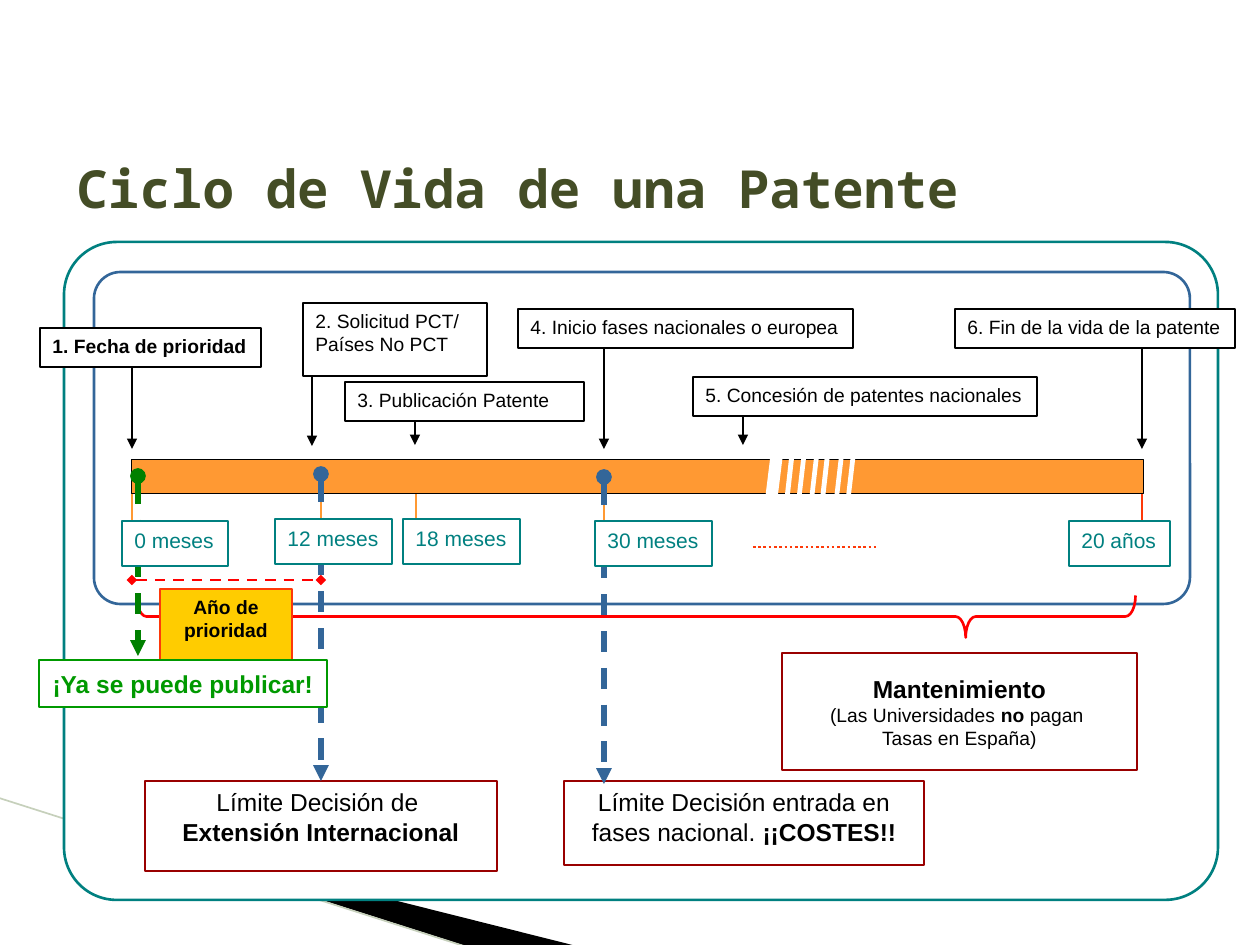
from lxml.etree import SubElement
from pptx import Presentation
from pptx.dml.color import RGBColor
from pptx.enum.dml import MSO_LINE
from pptx.enum.shapes import MSO_CONNECTOR, MSO_SHAPE
from pptx.enum.text import MSO_ANCHOR, PP_ALIGN
from pptx.oxml.ns import qn
from pptx.util import Pt

PX = 914400 / 126
C = {"white": "FFFFFF", "black": "000000", "olive": "444D26", "sage": "C6D0BB",
     "teal": "008080", "blue": "336699", "red": "FF0000", "orange": "FF9933",
     "scarlet": "FD3909", "gold": "FFCC00", "maroon": "990000",
     "green": "009900", "forest": "008000"}

EVENTS = [
    ([["1. Fecha de prioridad"]], (40, 328, 221, 39), True, False),
    ([["2. Solicitud PCT/"], ["Países No PCT"]], (303, 303, 184, 73), False, True),
    ([["3. Publicación Patente"]], (345, 382, 239, 39), False, True),
    ([["4. Inicio fases nacionales o europea"]], (518, 309, 335, 39), False, False),
    ([["5. Concesión de patentes nacionales"]], (693, 377, 344, 39), False, False),
    ([["6. Fin de la vida de la patente"]], (955, 309, 280, 39), False, False),
]
ELBOWS = [(252, 362, 132, 449), (475, 365, 312, 446), (577, 416, 415, 445),
          (717, 345, 604, 449), (906, 416, 743, 445), (979, 344, 1142, 449)]
TICKS = [(132, "orange"), (321, "orange"), (416, "orange"), (604, "orange"),
         (1142, "scarlet")]
MONTHS = [("0 meses", 122, 521, 106), ("12 meses", 275, 519, 117),
          ("18 meses", 403, 519, 117), ("30 meses", 595, 521, 117),
          ("20 años", 1069, 521, 101)]
CUTS = [(765, 446, 19, 0.35), (784, 450, 11, 0.55), (796, 450, 11, 0.57),
        (808, 456, 11, 0.57), (820, 446, 11, 0.55), (834, 446, 11, 0.57),
        (845, 452, 11, 0.57)]


def emu(*lengths):
    """Turn px lengths into EMU."""
    return [round(n * PX) for n in lengths]


def rgb(name):
    """Look up a palette colour."""
    return RGBColor.from_string(C[name])


def style(sp, fill, line, width):
    """Set fill and outline of a shape, without shadow."""
    sp.shadow.inherit = False
    if fill:
        sp.fill.solid()
        sp.fill.fore_color.rgb = rgb(fill)
    else:
        sp.fill.background()
    if line:
        sp.line.color.rgb = rgb(line)
        sp.line.width = Pt(width)
    else:
        sp.line.fill.background()


def add_ends(sp, head=None, tail=None):
    """Put line ends on a shape or connector."""
    ln = sp.element.spPr.find(qn("a:ln"))
    for tag, kind in (("a:headEnd", head), ("a:tailEnd", tail)):
        if kind:
            SubElement(ln, qn(tag), type=kind)


def add_shape(s, kind, at, fill="white", line=None, width=1.5, adj=()):
    """Add a preset shape."""
    sp = s.shapes.add_shape(kind, *emu(*at))
    style(sp, fill, line, width)
    for i, value in enumerate(adj):
        sp.adjustments[i] = value
    return sp


def add_box(s, paras, at, line, width, size, color="black", bold=False,
            fill="white", align=PP_ALIGN.CENTER, anchor=MSO_ANCHOR.TOP, wrap=True):
    """Add a text rectangle; a run is text or (text, bold), "\\n" a line break."""
    sp = add_shape(s, MSO_SHAPE.RECTANGLE, at, fill, line, width)
    tf = sp.text_frame
    tf.word_wrap = wrap
    tf.vertical_anchor = anchor
    for i, runs in enumerate(paras):
        p = tf.add_paragraph() if i else tf.paragraphs[0]
        p.alignment = align
        p.font.name, p.font.size, p.font.bold = "Arial", Pt(size), bold
        p.font.color.rgb = rgb(color)
        for run in runs:
            if run == "\n":
                p.add_line_break()
                continue
            text, strong = (run, None) if isinstance(run, str) else run
            r = p.add_run()
            r.text = text
            if strong:
                r.font.bold = True
    return sp


def add_line(s, start, end, color, width=1.5, dash=None, head=None, tail=None):
    """Add a straight connector."""
    cx = s.shapes.add_connector(MSO_CONNECTOR.STRAIGHT, *emu(*start, *end))
    cx.line.color.rgb = rgb(color)
    cx.line.width = Pt(width)
    if dash:
        cx.line.dash_style = dash
    add_ends(cx, head, tail)
    SubElement(cx.element.spPr, qn("a:effectLst"))
    return cx


def add_outline(s, points, closed, fill, line=None):
    """Add a freeform through the given points."""
    fb = s.shapes.build_freeform(*points[0], scale=PX)
    fb.add_line_segments(points[1:], close=closed)
    sp = fb.convert_to_shape()
    style(sp, fill, line, 1.5)
    return sp


def add_deadline(s, x, top, bottom, color):
    """Add a thick dashed arrow down from the time bar."""
    return add_line(s, (x, top), (x, bottom), color, 3, MSO_LINE.DASH, "oval", "triangle")


def add_title(s, text):
    """Place and format the title."""
    sp = s.shapes.title
    sp.left, sp.top, sp.width, sp.height = emu(64, 139, 1134, 97)
    tf = sp.text_frame
    tf.text = text
    tf.word_wrap = True
    tf.vertical_anchor = MSO_ANCHOR.MIDDLE
    p = tf.paragraphs[0]
    p.alignment = PP_ALIGN.LEFT
    p.font.name, p.font.size, p.font.bold = "Noto Sans Mono", Pt(30), True
    p.font.color.rgb = rgb("olive")


def add_background(s):
    """Add the corner decoration and the two rounded panels."""
    add_outline(s, [(67, 818), (576, 946), (469, 947), (68, 819)], True, "black")
    add_line(s, (-1, 798), (467, 947), "sage", 0.95)
    rounded = MSO_SHAPE.ROUNDED_RECTANGLE
    add_shape(s, rounded, (64, 242, 1154, 658), "white", "teal", adj=[0.08])
    add_shape(s, rounded, (94, 272, 1096, 332), "white", "blue", adj=[0.08])


def add_timeline(s):
    """Add the bar with its ticks, cuts and event arrows."""
    brace = add_shape(s, MSO_SHAPE.LEFT_BRACE, (615, 117, 42, 999), None, "red",
                      adj=[0.24, 0.83])
    brace.rotation = 270
    for x, color in TICKS:
        add_line(s, (x, 476), (x, 533), color)
    for x1, y1, x2, y2 in ELBOWS:
        sp = add_outline(s, [(x1, y1), (x2, y1), (x2, y2)], False, "white", "black")
        add_ends(sp, tail="triangle")
    add_shape(s, MSO_SHAPE.ROUNDED_RECTANGLE, (131, 459, 1012, 34), "orange",
              "black", 0.5, [0])
    for x, y, w, adj in CUTS:
        add_shape(s, MSO_SHAPE.PARALLELOGRAM, (x, y, w, 54), adj=[adj])
    add_line(s, (753, 547), (876, 547), "scarlet", dash=MSO_LINE.ROUND_DOT)
    for paras, at, bold, wrap in EVENTS:
        add_box(s, paras, at, "black", 0.75, 11, bold=bold, align=PP_ALIGN.LEFT, wrap=wrap)


def add_decisions(s):
    """Add the deadlines and the notes they lead to."""
    add_line(s, (132, 580), (321, 580), "red", 1.5, MSO_LINE.DASH, "diamond", "diamond")
    add_box(s, [["Año de prioridad"]], (160, 589, 132, 71), "scarlet", 0.75, 11,
            bold=True, fill="gold")
    extension = add_box(s, [["Límite Decisión de "], [("Extensión Internacional", True)]],
                        (145, 781, 352, 90), "maroon", 1.5, 14)
    add_deadline(s, 321, 474, 781, "blue").end_connect(extension, 0)
    add_box(s, [["¡Ya se puede publicar!"]], (39, 660, 288, 47), "green", 1.5, 14,
            "green", True, anchor=MSO_ANCHOR.MIDDLE, wrap=False)
    add_deadline(s, 138, 476, 656, "forest")
    add_box(s, [["Límite Decisión entrada en", "\n", "fases nacional. ",
                 ("¡¡COSTES!!", True)]], (564, 781, 360, 84), "maroon", 1.5, 14)
    add_deadline(s, 604, 477, 784, "blue")
    upkeep = add_box(s, [[("Mantenimiento", True)],
                         ["(Las Universidades ", ("no", True), " pagan "],
                         ["Tasas en España)"]],
                     (782, 653, 355, 117), "maroon", 0.75, 11, anchor=MSO_ANCHOR.MIDDLE)
    upkeep.text_frame.paragraphs[0].font.size = Pt(14)


def main():
    """Build the patent life cycle slide."""
    prs = Presentation()
    prs.slide_width, prs.slide_height = emu(1260, 945)
    s = prs.slides.add_slide(prs.slide_layouts[5])
    add_title(s, "Ciclo de Vida de una Patente")
    add_background(s)
    add_timeline(s)
    add_decisions(s)
    for text, x, y, w in MONTHS:
        add_box(s, [[text]], (x, y, w, 45), "teal", 1.5, 12, "teal",
                align=PP_ALIGN.LEFT, wrap=False)
    prs.save("out.pptx")


if __name__ == "__main__":
    main()
